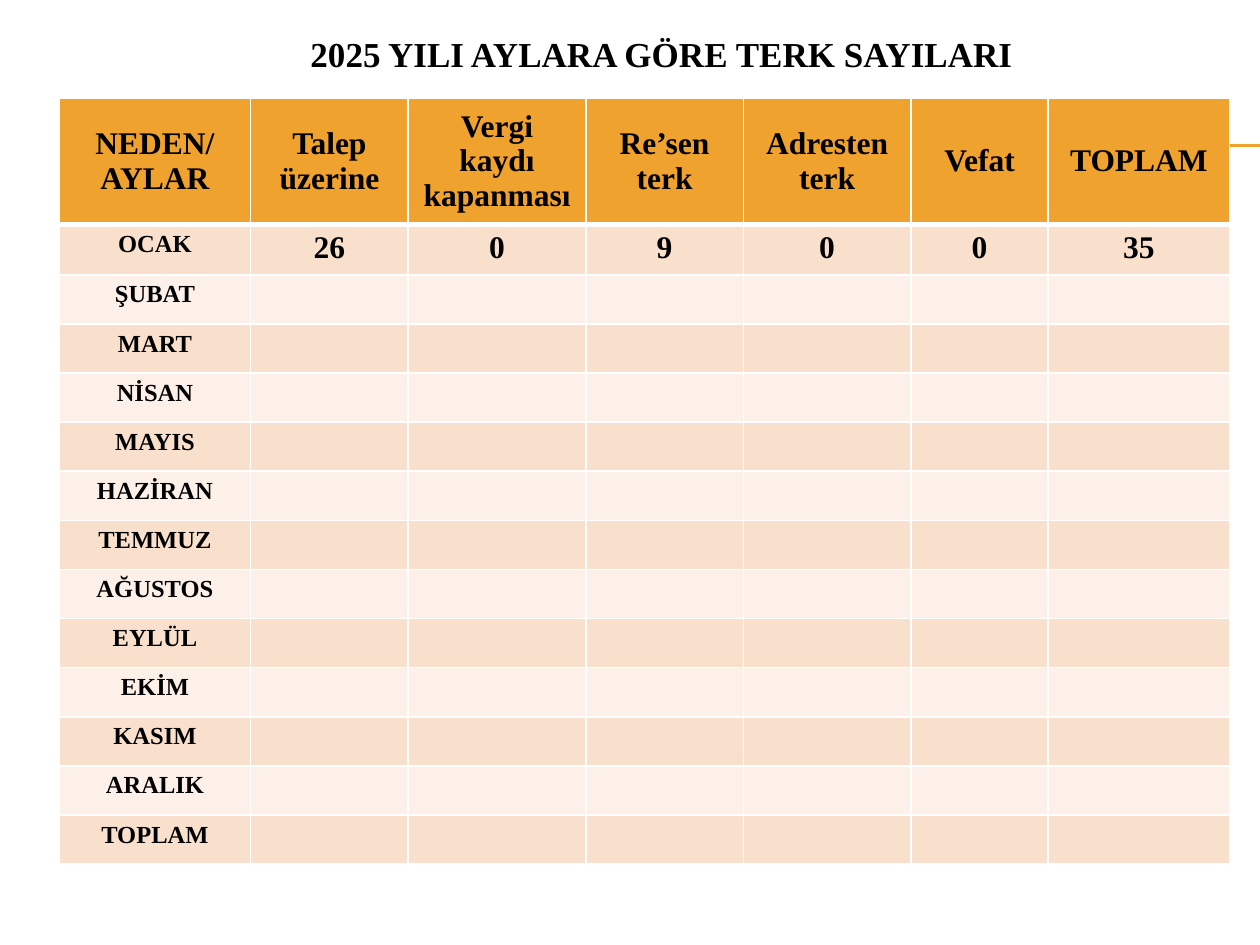
from lxml.etree import SubElement
from pptx import Presentation
from pptx.dml.color import RGBColor
from pptx.enum.shapes import MSO_CONNECTOR
from pptx.enum.text import MSO_ANCHOR, PP_ALIGN
from pptx.oxml import parse_xml
from pptx.oxml.ns import nsdecls, qn
from pptx.util import Inches, Pt

COLORS = {
    "accent": "F0A22E",
    "odd_row": "F9E0CD",
    "even_row": "FCF0E8",
    "border": "FFFFFF",
    "text": "000000",
}
FONT = "Times New Roman"
HEADERS = ["NEDEN/ AYLAR", "Talep üzerine", "Vergi kaydı kapanması",
           "Re’sen terk", "Adresten terk", "Vefat", "TOPLAM"]
ROW_LABELS = ["OCAK", "ŞUBAT", "MART", "NİSAN", "MAYIS", "HAZİRAN", "TEMMUZ",
              "AĞUSTOS", "EYLÜL", "EKİM", "KASIM", "ARALIK", "TOPLAM"]
COUNTS = {"OCAK": ["26", "0", "9", "0", "0", "35"]}
COLUMN_WIDTHS = [1.52, 1.25, 1.41, 1.25, 1.33, 1.09, 1.44]
HEADER_HEIGHT = 0.99
ROW_HEIGHT = 0.39


def color(name):
    """Return the named palette colour."""
    return RGBColor.from_string(COLORS[name])


def write_text(text_frame, text, size=18, bold=True, align=PP_ALIGN.CENTER):
    """Write one formatted paragraph into a text frame."""
    paragraph = text_frame.paragraphs[0]
    paragraph.alignment = align
    run = paragraph.add_run()
    run.text = text
    run.font.name = FONT
    run.font.size = Pt(size)
    run.font.bold = bold
    run.font.color.rgb = color("text")


def add_title(slide, text):
    """Add the centred slide title."""
    shape = slide.shapes.add_textbox(Inches(0.5), Inches(0.21), Inches(9.5), Inches(0.57))
    shape.text_frame.word_wrap = True
    write_text(shape.text_frame, text, size=20)


def add_rule(slide, top):
    """Add a thin horizontal rule that runs to the right slide edge."""
    rule = slide.shapes.add_connector(
        MSO_CONNECTOR.STRAIGHT, Inches(0.56), Inches(top), Inches(10), Inches(top))
    rule.line.color.rgb = color("accent")
    rule.line.width = Pt(0.75)
    SubElement(rule._element.spPr, qn("a:effectLst"))


def set_borders(cell, bottom=1, top=1):
    """Draw the four borders of a cell, with widths in points."""
    properties = cell._tc.get_or_add_tcPr()
    widths = {"lnL": 1, "lnR": 1, "lnT": top, "lnB": bottom}
    for index, (side, width) in enumerate(widths.items()):
        properties.insert(index, parse_xml(
            f'<a:{side} {nsdecls("a")} w="{Pt(width)}"><a:solidFill>'
            f'<a:srgbClr val="{COLORS["border"]}"/></a:solidFill></a:{side}>'))


def fill_cell(cell, text, fill, size=18, anchor=MSO_ANCHOR.TOP, **borders):
    """Give a cell its fill, borders and text."""
    cell.fill.solid()
    cell.fill.fore_color.rgb = color(fill)
    cell.vertical_anchor = anchor
    set_borders(cell, **borders)
    if text:
        write_text(cell.text_frame, text, size=size)
    else:
        cell.margin_top = cell.margin_bottom = 0


def add_counts_table(slide):
    """Add the table of monthly closures by reason."""
    height = HEADER_HEIGHT + ROW_HEIGHT * len(ROW_LABELS)
    table = slide.shapes.add_table(
        len(ROW_LABELS) + 1, len(HEADERS), Inches(0.47), Inches(0.78),
        Inches(sum(COLUMN_WIDTHS)), Inches(height)).table
    for column, width in zip(table.columns, COLUMN_WIDTHS):
        column.width = Inches(width)
    for row in table.rows:
        row.height = Inches(ROW_HEIGHT)
    table.rows[0].height = Inches(HEADER_HEIGHT)

    for column, header in enumerate(HEADERS):
        fill_cell(table.cell(0, column), header, "accent",
                  anchor=MSO_ANCHOR.MIDDLE, bottom=3)
    for row, label in enumerate(ROW_LABELS, start=1):
        fill = "odd_row" if row % 2 else "even_row"
        top = 3 if row == 1 else 1
        fill_cell(table.cell(row, 0), label, fill, size=14, top=top)
        counts = COUNTS.get(label, [""] * (len(HEADERS) - 1))
        for column, count in enumerate(counts, start=1):
            fill_cell(table.cell(row, column), count, fill, top=top)


def main():
    """Build and save the presentation."""
    presentation = Presentation()
    presentation.slide_width = Inches(10)
    presentation.slide_height = Inches(7.5)
    slide = presentation.slides.add_slide(presentation.slide_layouts[6])
    for top in (1.15, 1.16):
        add_rule(slide, top)
    add_title(slide, "2025 YILI AYLARA GÖRE TERK SAYILARI")
    add_counts_table(slide)
    presentation.save("out.pptx")


if __name__ == "__main__":
    main()
